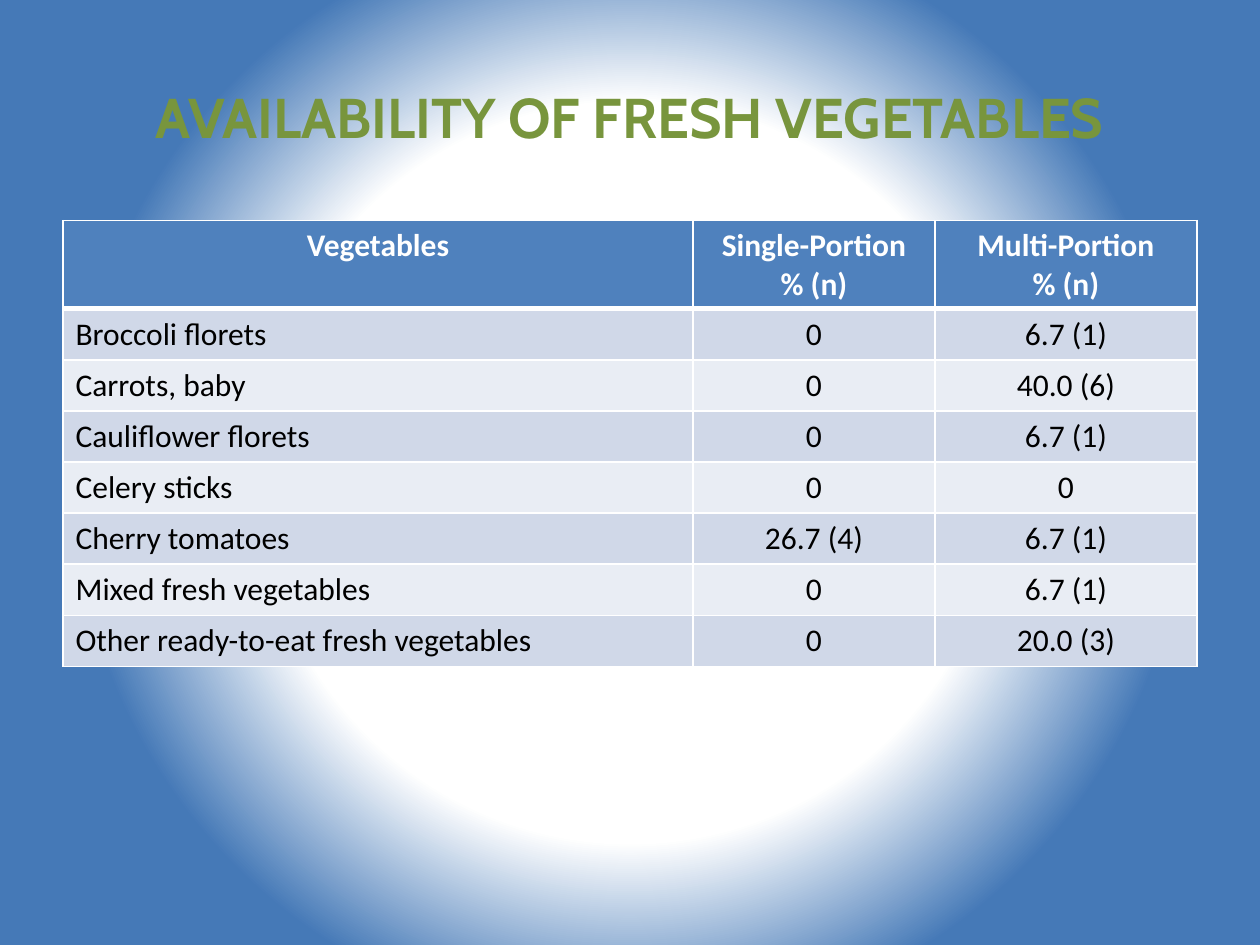
from lxml import etree
from pptx import Presentation
from pptx.dml.color import RGBColor
from pptx.enum.text import MSO_ANCHOR, PP_ALIGN
from pptx.oxml import parse_xml
from pptx.oxml.ns import nsdecls, qn
from pptx.util import Inches, Pt

WHITE, BLACK = "FFFFFF", "000000"
BLUE, GREEN, HEADER = "4579B7", "78953D", "4F81BD"
BANDS = ("D0D8E8", "E9EDF4")

COLUMN_WIDTHS = (5, 1.92, 2.08)
HEADER_HEIGHT = 0.7
ROWS = (
    ("Vegetables", "Single-Portion\n% (n)", "Multi-Portion\n% (n)"),
    ("Broccoli florets", "0", "6.7 (1)"),
    ("Carrots, baby", "0", "40.0 (6)"),
    ("Cauliflower florets", "0", "6.7 (1)"),
    ("Celery sticks", "0", "0"),
    ("Cherry tomatoes", "26.7 (4)", "6.7 (1)"),
    ("Mixed fresh vegetables", "0", "6.7 (1)"),
    ("Other ready-to-eat fresh vegetables", "0", "20.0 (3)"),
)


def color(hex_code):
    return RGBColor.from_string(hex_code)


def write(frame, text, font, size, hex_code, bold, align):
    """Fill a text frame, one paragraph per line."""
    for i, line in enumerate(text.split("\n")):
        paragraph = frame.paragraphs[0] if i == 0 else frame.add_paragraph()
        paragraph.alignment = align
        run = paragraph.add_run()
        run.text = line
        run.font.name = font
        run.font.size = Pt(size)
        run.font.bold = bold
        run.font.color.rgb = color(hex_code)


def paint_background(slide):
    """White glow in the centre, fading to blue."""
    fill = slide.background.fill
    fill.gradient()
    for stop, (position, hex_code) in zip(fill.gradient_stops, ((0.47, WHITE), (0.71, BLUE))):
        stop.position = position
        stop.color.rgb = color(hex_code)
    gradient = slide.element.find(".//" + qn("a:gradFill"))
    circle = parse_xml(
        f'<a:path {nsdecls("a")} path="circle">'
        '<a:fillToRect l="50000" t="50000" r="50000" b="50000"/></a:path>'
    )
    gradient.replace(gradient.find(qn("a:lin")), circle)


def add_title(slide, left, top, width, height):
    title = slide.shapes.add_textbox(Inches(left), Inches(top), Inches(width), Inches(height))
    frame = title.text_frame
    frame.word_wrap = True
    frame.vertical_anchor = MSO_ANCHOR.MIDDLE
    write(frame, "AVAILABILITY OF FRESH VEGETABLES", "Cabin", 32, GREEN, True, PP_ALIGN.CENTER)


def set_borders(cell, bottom, top):
    """White rules; borders must precede the fill in the cell properties."""
    properties = cell._tc.get_or_add_tcPr()
    sides = (("lnL", 1), ("lnR", 1), ("lnT", top), ("lnB", bottom))
    for i, (side, points) in enumerate(sides):
        line = etree.Element(qn(f"a:{side}"), w=str(Pt(points)))
        solid = etree.SubElement(line, qn("a:solidFill"))
        etree.SubElement(solid, qn("a:srgbClr"), val=WHITE)
        properties.insert(i, line)


def add_vegetable_table(slide, left, top, width, height):
    table = slide.shapes.add_table(
        len(ROWS), len(COLUMN_WIDTHS), Inches(left), Inches(top), Inches(width), Inches(height)
    ).table
    for column, share in zip(table.columns, COLUMN_WIDTHS):
        column.width = Inches(width * share / sum(COLUMN_WIDTHS))
    body_height = (height - HEADER_HEIGHT) / (len(ROWS) - 1)

    for r, values in enumerate(ROWS):
        is_header = r == 0
        table.rows[r].height = Inches(HEADER_HEIGHT if is_header else body_height)
        for c, value in enumerate(values):
            cell = table.cell(r, c)
            cell.fill.solid()
            cell.fill.fore_color.rgb = color(HEADER if is_header else BANDS[(r - 1) % 2])
            set_borders(cell, bottom=3 if is_header else 1, top=3 if r == 1 else 1)
            align = PP_ALIGN.CENTER if is_header or c > 0 else PP_ALIGN.LEFT
            write(cell.text_frame, value, "Calibri", 18,
                  WHITE if is_header else BLACK, is_header, align)


def main():
    prs = Presentation()
    prs.slide_width, prs.slide_height = Inches(10), Inches(7.5)
    slide = prs.slides.add_slide(prs.slide_layouts[6])
    paint_background(slide)
    add_title(slide, 0.5, 0.3, 9, 1.25)
    add_vegetable_table(slide, 0.5, 1.75, 9, 3.54)
    prs.save("out.pptx")


if __name__ == "__main__":
    main()
